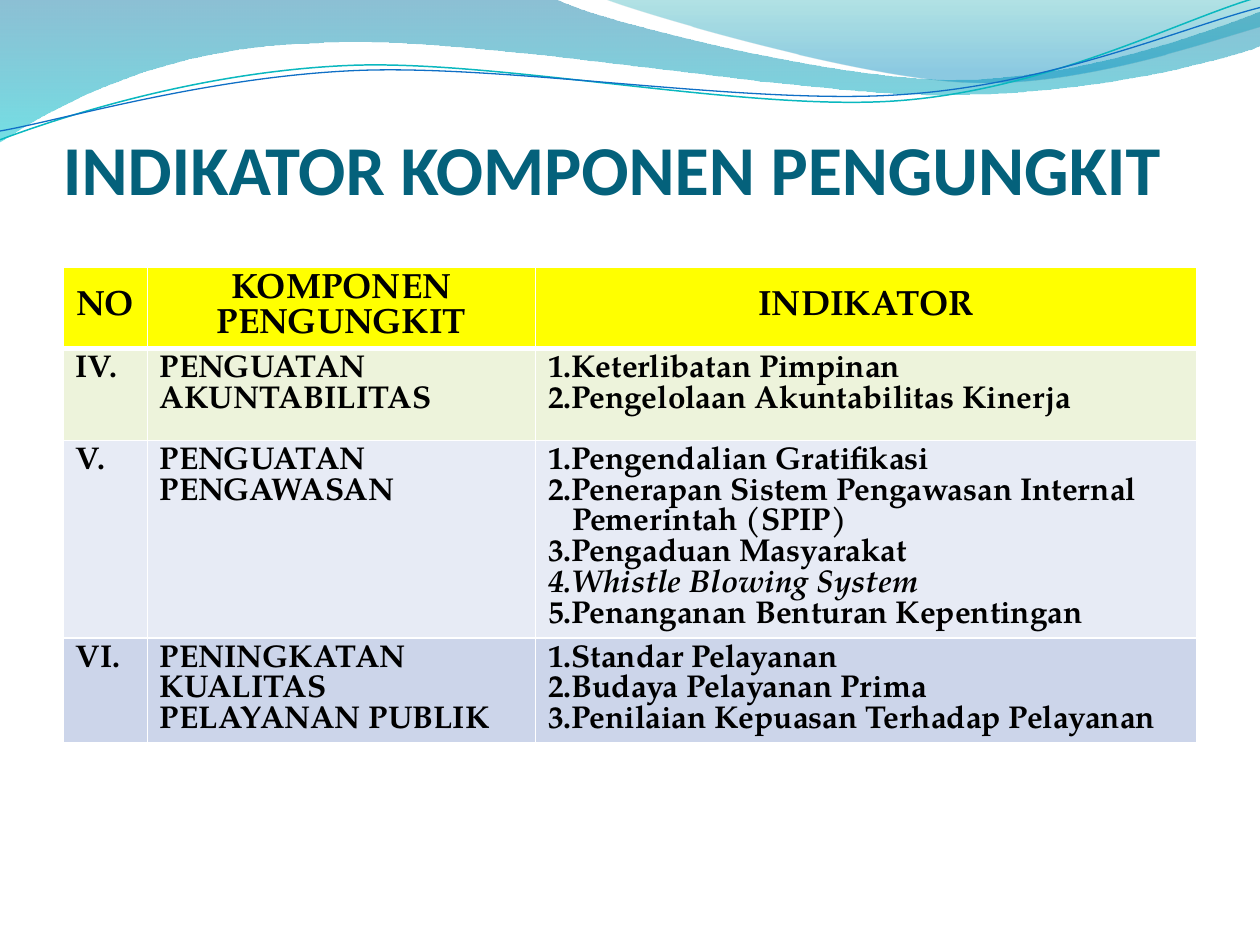
import pptx
import pptx.dml.color
import pptx.enum.text
import pptx.oxml
import pptx.oxml.ns
import pptx.util
from dataclasses import dataclass
from pptx.util import Inches

ANCHOR = pptx.enum.text.MSO_ANCHOR
ALIGN = pptx.enum.text.PP_ALIGN


@dataclass(frozen=True)
class Theme:
    title_font: str = "Calibri"
    table_font: str = "TeX Gyre Pagella"
    title_size: int = 40
    header_size: int = 20
    body_size: int = 18
    line_ratio: float = 0.98
    title: str = "04617B"
    text: str = "000000"
    border: str = "FFFFFF"
    header_fill: str = "FFFF00"
    row_fills: tuple = ("EDF3DB", "E7EBF5", "CCD5EA")
    # Stops: position, colour, opacity in percent
    wide_wave: tuple = ((0, "0074A1", 45), (1, "00C6CF", 55))
    right_wave: tuple = ((0, "00A1A9", 30), (0.8, "008BBF", 45))
    upper_line: str = "0AB8BF"
    lower_line: str = "0F6FC6"


THEME = Theme()

# An outline is a list of points; six numbers are a cubic curve from the last point.
WIDE_WAVE = [
    (0, 0), (4.4, -0.01),
    (4.76, 0.17, 6.64, 0.63, 7.58, 0.63), (8.53, 0.63, 9.58, 0.26, 10, 0.09),
    (10.01, 0.36),
    (9.83, 0.44, 8.7, 0.76, 7.46, 0.75), (6.22, 0.75, 3.82, 0.28, 2.57, 0.34),
    (1.29, 0.36, 0.46, 0.83, -0.01, 1.13),
]
RIGHT_WAVE = [
    (4.79, -0.01),
    (5.09, 0.11, 6.82, 0.62, 7.69, 0.65), (8.56, 0.69, 9.61, 0.32, 10, 0.21),
    (10, 0),
]
UPPER_LINE = [
    (0, 1.11),
    (0.48, 0.93, 1.58, 0.57, 2.77, 0.52), (3.95, 0.47, 5.93, 0.89, 7.13, 0.8),
    (8.33, 0.71, 9.38, 0.15, 9.98, -0.02),
]
LOWER_LINE = [
    (0, 1.04),
    (0.47, 0.96, 1.64, 0.61, 2.83, 0.56), (4.03, 0.51, 5.97, 0.84, 7.17, 0.75),
    (8.36, 0.67, 9.41, 0.21, 10, 0.06),
]

HEADERS = ("NO", "KOMPONEN PENGUNGKIT", "INDIKATOR")
WRAPPED_ITEM = "2.Penerapan Sistem Pengawasan Internal Pemerintah (SPIP)"
ITALIC_ITEM = "4.Whistle Blowing System"
COMPONENTS = [
    ("IV.", "PENGUATAN AKUNTABILITAS",
     ["1.Keterlibatan Pimpinan", "2.Pengelolaan Akuntabilitas Kinerja"]),
    ("V.", "PENGUATAN PENGAWASAN",
     ["1.Pengendalian Gratifikasi", WRAPPED_ITEM, "3.Pengaduan Masyarakat",
      ITALIC_ITEM, "5.Penanganan Benturan Kepentingan"]),
    ("VI.", "PENINGKATAN KUALITAS PELAYANAN PUBLIK",
     ["1.Standar Pelayanan", "2.Budaya Pelayanan Prima",
      "3.Penilaian Kepuasan Terhadap Pelayanan"]),
]
COLUMN_WIDTHS = (0.67, 3.08, 5.25)
ROW_HEIGHTS = (0.64, 0.73, 1.57, 0.83)


def rgb(value):
    return pptx.dml.color.RGBColor.from_string(value)


def write_text(paragraph, text, *, font, size, color=THEME.text, italic=False,
               align=ALIGN.LEFT, line_ratio=None, hanging=0):
    paragraph.alignment = align
    if line_ratio:
        paragraph.line_spacing = pptx.util.Pt(round(size * line_ratio, 1))
    if hanging:
        properties = paragraph._p.get_or_add_pPr()
        properties.set("marL", str(Inches(hanging)))
        properties.set("indent", str(-Inches(hanging)))
    run = paragraph.add_run()
    run.text = text
    run.font.name = font
    run.font.size = pptx.util.Pt(size)
    run.font.bold = True
    run.font.italic = italic
    run.font.color.rgb = rgb(color)


def add_outline(slide, outline, close):
    """Build a freeform through all points, then join each curve's three into one cubic."""
    first, *rest = outline
    points = [(Inches(numbers[i]), Inches(numbers[i + 1]))
              for numbers in rest for i in range(0, len(numbers), 2)]
    builder = slide.shapes.build_freeform(Inches(first[0]), Inches(first[1]))
    builder.add_line_segments(points, close=close)
    shape = builder.convert_to_shape()
    shape.shadow.inherit = False
    segments = iter(list(shape._element.iter(pptx.oxml.ns.qn("a:lnTo"))))
    for numbers in rest:
        segment = next(segments)
        if len(numbers) == 6:
            curve = pptx.oxml.parse_xml(
                f'<a:cubicBezTo {pptx.oxml.ns.nsdecls("a")}/>')
            segment.addprevious(curve)
            for part in (segment, next(segments), next(segments)):
                curve.append(part[0])
                part.getparent().remove(part)
    return shape


def add_wave(slide, outline, stops):
    shape = add_outline(slide, outline, close=True)
    shape.line.fill.background()
    shape.fill.gradient()
    shape.fill.gradient_angle = 270
    for stop, (position, color, _) in zip(shape.fill.gradient_stops, stops):
        stop.position = position
        stop.color.rgb = rgb(color)
    colors = shape._element.spPr.iter(pptx.oxml.ns.qn("a:srgbClr"))
    for element, (_, _, opacity) in zip(list(colors), stops):
        element.append(pptx.oxml.parse_xml(
            f'<a:alpha {pptx.oxml.ns.nsdecls("a")} val="{opacity * 1000}"/>'))


def add_wave_line(slide, outline, color, width):
    shape = add_outline(slide, outline, close=False)
    shape.fill.background()
    shape.line.color.rgb = rgb(color)
    shape.line.width = pptx.util.Pt(width)


def add_title(slide, text):
    box = slide.shapes.add_textbox(Inches(0.5), Inches(0.78), Inches(9), Inches(0.88))
    frame = box.text_frame
    frame.word_wrap = True
    frame.vertical_anchor = ANCHOR.BOTTOM
    frame.margin_left = frame.margin_right = frame.margin_bottom = 0
    write_text(frame.paragraphs[0], text, font=THEME.title_font,
               size=THEME.title_size, color=THEME.title)


def set_borders(cell, **widths):
    """Draw cell borders; widths in points by side: L, R, T, B."""
    properties = cell._tc.get_or_add_tcPr()
    for index, (side, width) in enumerate(widths.items()):
        properties.insert(index, pptx.oxml.parse_xml(
            f'<a:ln{side} {pptx.oxml.ns.nsdecls("a")} w="{pptx.util.Pt(width)}">'
            f'<a:solidFill><a:srgbClr val="{THEME.border}"/></a:solidFill></a:ln{side}>'))


def fill_cell(cell, texts, fill, header=False):
    cell.fill.solid()
    cell.fill.fore_color.rgb = rgb(fill)
    cell.vertical_anchor = ANCHOR.MIDDLE if header else ANCHOR.TOP
    frame = cell.text_frame
    for index, text in enumerate(texts):
        paragraph = frame.add_paragraph() if index else frame.paragraphs[0]
        write_text(paragraph, text, font=THEME.table_font,
                   size=THEME.header_size if header else THEME.body_size,
                   italic=text == ITALIC_ITEM,
                   align=ALIGN.CENTER if header else ALIGN.LEFT,
                   line_ratio=THEME.line_ratio,
                   hanging=0.19 if text == WRAPPED_ITEM else 0)


def add_component_table(slide):
    rows = [HEADERS, *COMPONENTS]
    table = slide.shapes.add_table(
        len(rows), len(HEADERS), Inches(0.5), Inches(2.12),
        Inches(sum(COLUMN_WIDTHS)), Inches(sum(ROW_HEIGHTS))).table
    for column, width in zip(table.columns, COLUMN_WIDTHS):
        column.width = Inches(width)
    for row, height in zip(table.rows, ROW_HEIGHTS):
        row.height = Inches(height)
    fills = (THEME.header_fill, *THEME.row_fills)
    for row_index, (values, fill) in enumerate(zip(rows, fills)):
        for column_index, value in enumerate(values):
            cell = table.cell(row_index, column_index)
            texts = [value] if isinstance(value, str) else value
            fill_cell(cell, texts, fill, header=row_index == 0)
            set_borders(cell, L=1, R=1, T=3 if row_index == 1 else 1,
                        B=3 if row_index == 0 else 1)


def main():
    presentation = pptx.Presentation()
    presentation.slide_width = Inches(10)
    presentation.slide_height = Inches(7.5)
    slide = presentation.slides.add_slide(presentation.slide_layouts[6])
    add_wave(slide, WIDE_WAVE, THEME.wide_wave)
    add_wave(slide, RIGHT_WAVE, THEME.right_wave)
    add_wave_line(slide, UPPER_LINE, THEME.upper_line, 0.85)
    add_wave_line(slide, LOWER_LINE, THEME.lower_line, 0.75)
    add_title(slide, "INDIKATOR KOMPONEN PENGUNGKIT")
    add_component_table(slide)
    presentation.save("out.pptx")


if __name__ == "__main__":
    main()
